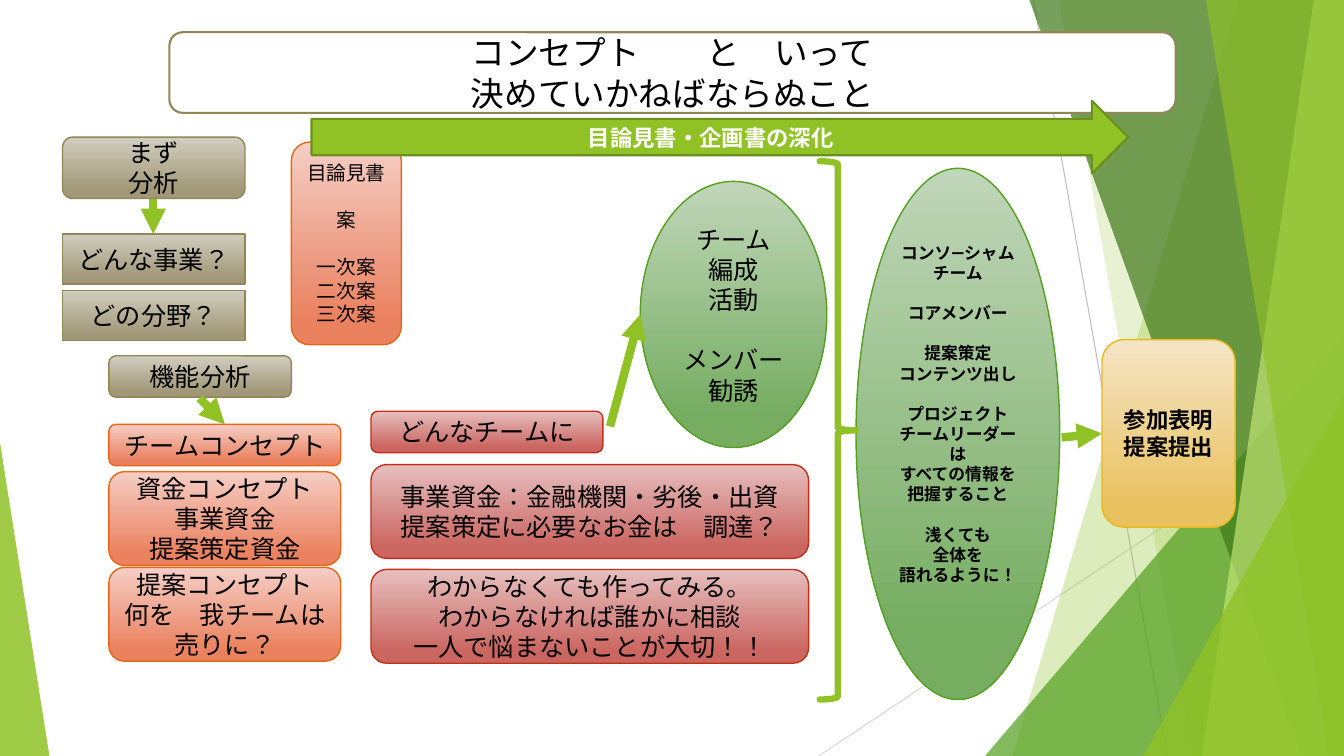
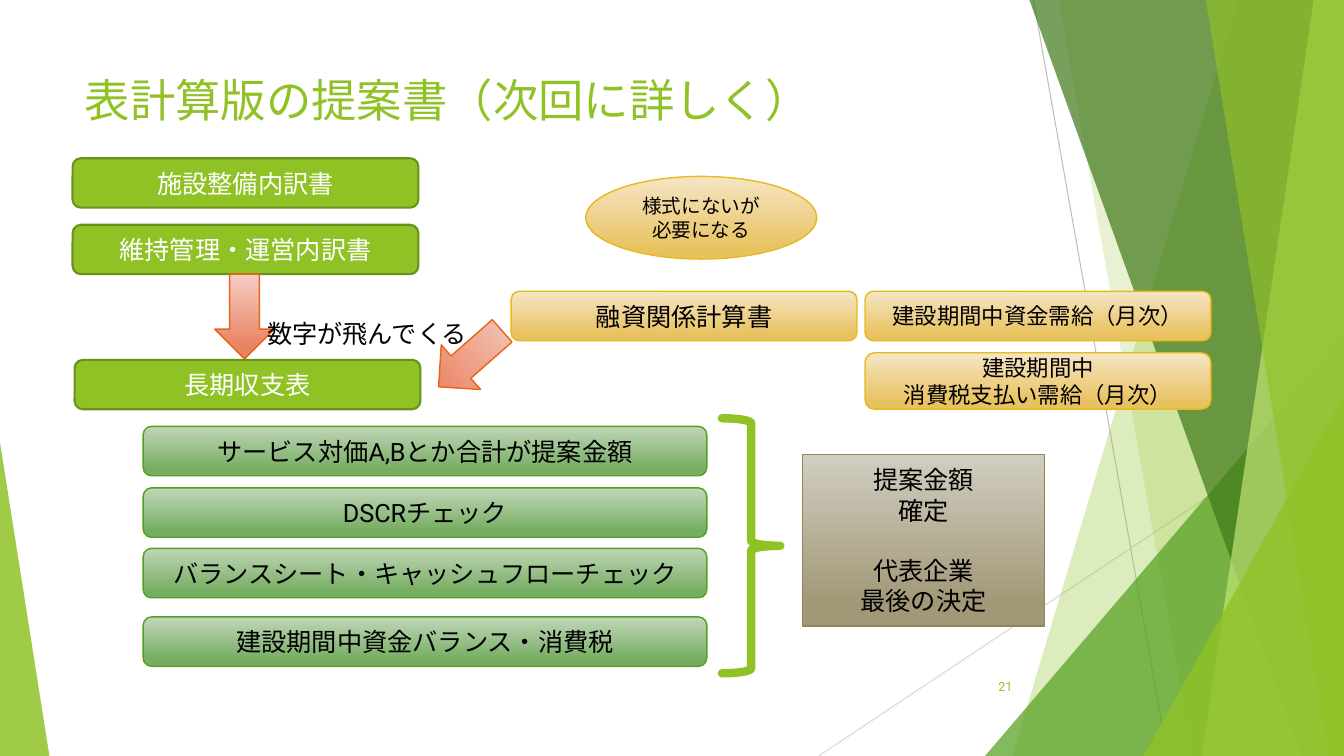
from pptx import Presentation
from pptx import util as u
from pptx.dml.color import RGBColor
from pptx.enum import lang, shapes, text
from pptx.oxml.ns import qn
from lxml import etree

WIDTH, HEIGHT = 13.33, 7.5
BLACK = RGBColor(0, 0, 0)
WHITE = RGBColor(255, 255, 255)
LIME = RGBColor(0x90, 0xC2, 0x26)
DARK_LIME = RGBColor(0x6B, 0x90, 0x1C)
PALE_LIME = RGBColor(0xC0, 0xE4, 0x74)
LEAF = RGBColor(0x54, 0xA0, 0x21)
FOREST = RGBColor(0x3F, 0x78, 0x19)
GRAY = RGBColor(0xBF, 0xBF, 0xBF)
LIGHT_GRAY = RGBColor(0xD9, 0xD9, 0xD9)
OLIVE = RGBColor(0x91, 0x86, 0x55)
BODY_FONT, BOLD_FONT = "Roboto", "Noto Sans CJK JP"
LINE_HEIGHT = 1.19

STYLES = {
    "plain": ([WHITE], OLIVE, 1.5, BLACK),
    "lime": ([LIME], DARK_LIME, 1.5, WHITE),
    "olive": ([RGBColor(0xD1, 0xCD, 0xC0), RGBColor(0xA1, 0x98, 0x77)], OLIVE, 1, BLACK),
    "orange": ([RGBColor(0xF5, 0xCE, 0xC5), RGBColor(0xEA, 0x81, 0x5F)],
               RGBColor(0xE7, 0x66, 0x18), 1, BLACK),
    "red": ([RGBColor(0xE6, 0xBF, 0xBE), RGBColor(0xCB, 0x65, 0x60)],
            RGBColor(0xC4, 0x2F, 0x1A), 1, BLACK),
    "green": ([RGBColor(0xC0, 0xD6, 0xB9), RGBColor(0x76, 0xAD, 0x61)], LEAF, 1, BLACK),
    "gold": ([RGBColor(0xF5, 0xE5, 0xC5), RGBColor(0xE9, 0xC2, 0x60)],
             RGBColor(0xE6, 0xB9, 0x1E), 1, BLACK),
}
KINDS = {
    "round": shapes.MSO_SHAPE.ROUNDED_RECTANGLE,
    "rect": shapes.MSO_SHAPE.RECTANGLE,
    "oval": shapes.MSO_SHAPE.OVAL,
    "right": shapes.MSO_SHAPE.RIGHT_ARROW,
    "down": shapes.MSO_SHAPE.DOWN_ARROW,
}

BACKDROP_LINES = [
    ((10.25, 0), (11.58, HEIGHT), GRAY),
    ((WIDTH, 4.03), (8.12, HEIGHT), LIGHT_GRAY),
]
BACKDROP_PANELS = [
    ("band", 12.28, 10.04, LIME, 30),
    ("band", 10.5, 11.83, LIME, 20),
    ("triangle", (9.77, 3.33, WIDTH), 1, LEAF, 72),
    ("band", 10.21, 12.91, FOREST, 70),
    ("band", 13.03, 11.92, PALE_LIME, 70),
    ("band", 11.96, 13.18, LIME, 65),
    ("triangle", (11.34, 3.93, WIDTH), 1, LIME, 80),
    ("triangle", (0, 4.39, 0.49), 0, LIME, 85),
]

ANALYSIS, CONCEPT, TEAM = 0.62, 1.08, 3.68
CONCEPT_BOXES = [
    ("plain", "round", (1.68, 0.32, 9.98, 0.8), "コンセプト　　と　いって\n決めていかねばならぬこと", 24),
    ("olive", "round", (ANALYSIS, 1.36, 1.81, 0.61), "まず\n分析", 18),
    ("olive", "rect", (ANALYSIS, 2.32, 1.81, 0.5), "どんな事業？", 18),
    ("olive", "rect", (ANALYSIS, 2.88, 1.81, 0.5), "どの分野？", 18),
    ("olive", "round", (CONCEPT, 3.53, 1.81, 0.41), "機能分析", 18),
    ("orange", "round", (CONCEPT, 4.21, 2.3, 0.41), "チームコンセプト", 18),
    ("orange", "round", (CONCEPT, 4.68, 2.3, 0.93), "資金コンセプト\n事業資金\n提案策定資金", 18),
    ("orange", "round", (CONCEPT, 5.63, 2.3, 0.93),
     "提案コンセプト\n何を　我チームは\n売りに？", 18),
    ("red", "round", (TEAM, 4.08, 2.3, 0.41), "どんなチームに", 18),
    ("red", "round", (TEAM, 4.61, 4.34, 0.93),
     "事業資金：金融機関・劣後・出資\n提案策定に必要なお金は　調達？", 18),
    ("red", "round", (TEAM, 5.65, 4.34, 0.93),
     "わからなくても作ってみる。\nわからなければ誰かに相談\n一人で悩まないことが大切！！", 18),
    ("green", "oval", (6.35, 1.8, 1.85, 2.64), "チーム\n編成\n活動\n\nメンバー\n勧誘", 18),
]
CONSORTIUM = ("green", "oval", (8.49, 1.67, 2.02, 5.27),
              "コンソ―シャム\nチーム\n\nコアメンバー\n\n提案策定\nコンテンツ出し\n\n"
              "プロジェクトチームリーダー\nは\nすべての情報を\n把握すること\n\n"
              "浅くても\n全体を\n語れるように！", 12, True)
SUBMISSION = ("gold", "round", (10.93, 3.37, 1.32, 1.86), "参加表明\n提案提出", 16, True)
DRAFTS = ("orange", "round", (2.89, 1.41, 1.09, 2.01),
          "目論見書\n\n案\n\n一次案\n二次案\n三次案", 14)
DEEPENING = ("lime", "right", (3.09, 1, 8.1, 0.72), "目論見書・企画書の深化", 16, True)
FLOW_ARROWS = [
    ((1.52, 1.97), (1.52, 2.32)),
    ((1.98, 3.95), (2.23, 4.21)),
    ((6.05, 4.23), (6.35, 3.12)),
    ((10.53, 4.34), (10.93, 4.3)),
]

WORKBOOK_TITLE = "表計算版の提案書（次回に詳しく）"
SHEET_WIDTH, SHEET_HEIGHT = 3.43, 0.49
SHEETS = [
    ("lime", 0.72, 1.57, "施設整備内訳書", 18),
    ("lime", 0.72, 2.23, "維持管理・運営内訳書", 18),
    ("lime", 0.74, 3.57, "長期収支表", 18),
    ("gold", 5.07, 2.89, "融資関係計算書", 18),
    ("gold", 8.58, 2.89, "建設期間中資金需給（月次）", 16),
]
CHECKS = [
    (4.23, "サービス対価A,Bとか合計が提案金額"),
    (4.84, "DSCRチェック"),
    (5.44, "バランスシート・キャッシュフローチェック"),
    (6.12, "建設期間中資金バランス・消費税"),
]
EXTRA_BOXES = [
    ("gold", "oval", (5.81, 1.75, 2.29, 0.82), "様式にないが\n必要になる", 14),
    ("gold", "round", (8.58, 3.5, SHEET_WIDTH, 0.56), "建設期間中\n消費税支払い需給（月次）", 16),
    ("olive", "rect", (7.96, 4.51, 2.4, 1.7), "提案金額\n確定\n\n代表企業\n最後の決定", 18),
]


def inches(values):
    return [u.Inches(value) for value in values]


def write(shape, content, size, color, bold=False, align=text.PP_ALIGN.CENTER,
          anchor=text.MSO_ANCHOR.MIDDLE):
    frame = shape.text_frame
    frame.word_wrap = True
    frame.vertical_anchor = anchor
    frame.text = content.replace("\n\n", "\n")
    gaps = [block.count("\n") + 1 for block in content.split("\n\n")]
    starts = {sum(gaps[:index]) for index in range(1, len(gaps))}
    for index, paragraph in enumerate(frame.paragraphs):
        paragraph.alignment = align
        paragraph.space_before = u.Pt(size * LINE_HEIGHT if index in starts else 0)
        for run in paragraph.runs:
            font = run.font
            font.size, font.bold = u.Pt(size), bold
            font.color.rgb = color
            font.language_id = lang.MSO_LANGUAGE_ID.JAPANESE
            font.name = BOLD_FONT if bold else BODY_FONT
            etree.SubElement(font._element, qn("a:ea"), typeface=BODY_FONT)


def add_box(slide, style, kind, place, content="", size=18, bold=False):
    fills, line_color, line_width, text_color = STYLES[style]
    shape = slide.shapes.add_shape(KINDS[kind], *inches(place))
    shape.shadow.inherit = False
    if len(fills) == 1:
        shape.fill.solid()
        shape.fill.fore_color.rgb = fills[0]
    else:
        shape.fill.gradient()
        shape.fill.gradient_angle = 270
        for stop, color, position in zip(shape.fill.gradient_stops, fills, (0, 0.88)):
            stop.color.rgb = color
            stop.position = position
    shape.line.color.rgb = line_color
    shape.line.width = u.Pt(line_width)
    if content:
        write(shape, content, size, text_color, bold)
    return shape


def add_line(slide, start, end, color, width, arrow=False):
    line = slide.shapes.add_connector(shapes.MSO_CONNECTOR.STRAIGHT, *inches(start + end))
    line.line.color.rgb = color
    line.line.width = u.Pt(width)
    properties = line.element.spPr
    if arrow:
        etree.SubElement(properties.find(qn("a:ln")), qn("a:tailEnd"), type="triangle")
    etree.SubElement(properties, qn("a:effectLst"))
    return line


def add_brace(slide, place, width):
    brace = slide.shapes.add_shape(shapes.MSO_SHAPE.RIGHT_BRACE, *inches(place))
    brace.shadow.inherit = False
    brace.fill.background()
    brace.line.color.rgb = LIME
    brace.line.width = u.Pt(width)
    brace.element.spPr.find(qn("a:ln")).set("cap", "rnd")


def add_panel(slide, kind, position, edge, color, opacity):
    if kind == "band":
        corners = [(position, 0), (WIDTH, 0), (WIDTH, HEIGHT), (edge, HEIGHT)]
        points = [inches(corner) for corner in corners]
        builder = slide.shapes.build_freeform(*points[0])
        builder.add_line_segments(points[1:], close=True)
        panel = builder.convert_to_shape()
    else:
        left, top, right = position
        panel = slide.shapes.add_shape(shapes.MSO_SHAPE.ISOSCELES_TRIANGLE,
                                       *inches((left, top, right - left, HEIGHT - top)))
        panel.adjustments[0] = edge
    panel.shadow.inherit = False
    panel.fill.solid()
    panel.fill.fore_color.rgb = color
    color_element = panel.element.spPr.find(qn("a:solidFill"))[0]
    etree.SubElement(color_element, qn("a:alpha"), val=str(opacity * 1000))
    panel.line.fill.background()
    return panel


def build_master(presentation, slide):
    parts = [add_line(slide, *line, 0.75) for line in BACKDROP_LINES]
    parts += [add_panel(slide, *panel) for panel in BACKDROP_PANELS]
    tree = presentation.slide_master.element.cSld.spTree
    for index, part in enumerate(parts):
        tree.insert(2 + index, part.element)


def build_concept(slide):
    for box in CONCEPT_BOXES:
        add_box(slide, *box)
    consortium = add_box(slide, *CONSORTIUM)
    consortium.text_frame.margin_bottom = u.Inches(0.45)
    add_brace(slide, (8.13, 1.6, 0.36, 5.34), 4.5)
    add_box(slide, *SUBMISSION)
    for start, end in FLOW_ARROWS:
        add_line(slide, start, end, LIME, 6, arrow=True)
    add_box(slide, *DRAFTS)
    add_box(slide, *DEEPENING)


def build_workbook(slide):
    title = slide.shapes.title
    title.left, title.top, title.width, title.height = inches((0.74, 0.67, 9.4, 0.52))
    write(title, WORKBOOK_TITLE, 32.4, LIME,
          align=text.PP_ALIGN.LEFT, anchor=text.MSO_ANCHOR.TOP)
    number = slide.shapes.add_textbox(*inches((9.39, 6.61, 0.75, 0.4)))
    write(number, "21", 9, LIME, align=text.PP_ALIGN.RIGHT)
    for style, left, top, content, size in SHEETS:
        add_box(slide, style, "round", (left, top, SHEET_WIDTH, SHEET_HEIGHT), content, size)
    for left, top, rotation in ((2.13, 2.72, 0), (4.37, 3.14, 48.6)):
        add_box(slide, "orange", "down", (left, top, 0.59, 0.84)).rotation = rotation
    label = slide.shapes.add_textbox(*inches((2.55, 3.11, 2.35, 0.4)))
    write(label, "数字が飛んでくる", 18, BLACK, align=text.PP_ALIGN.LEFT,
          anchor=text.MSO_ANCHOR.TOP)
    for top, content in CHECKS:
        add_box(slide, "green", "round", (1.42, top, 5.59, SHEET_HEIGHT), content)
    add_brace(slide, (7.16, 4.15, 0.58, 2.53), 6)
    for box in EXTRA_BOXES:
        add_box(slide, *box)


def main():
    presentation = Presentation()
    presentation.slide_width, presentation.slide_height = inches((WIDTH, HEIGHT))
    layouts = presentation.slide_layouts
    concept = presentation.slides.add_slide(layouts.get_by_name("Blank"))
    build_master(presentation, concept)
    build_concept(concept)
    build_workbook(presentation.slides.add_slide(layouts.get_by_name("Title Only")))
    presentation.save("out.pptx")


if __name__ == "__main__":
    main()
